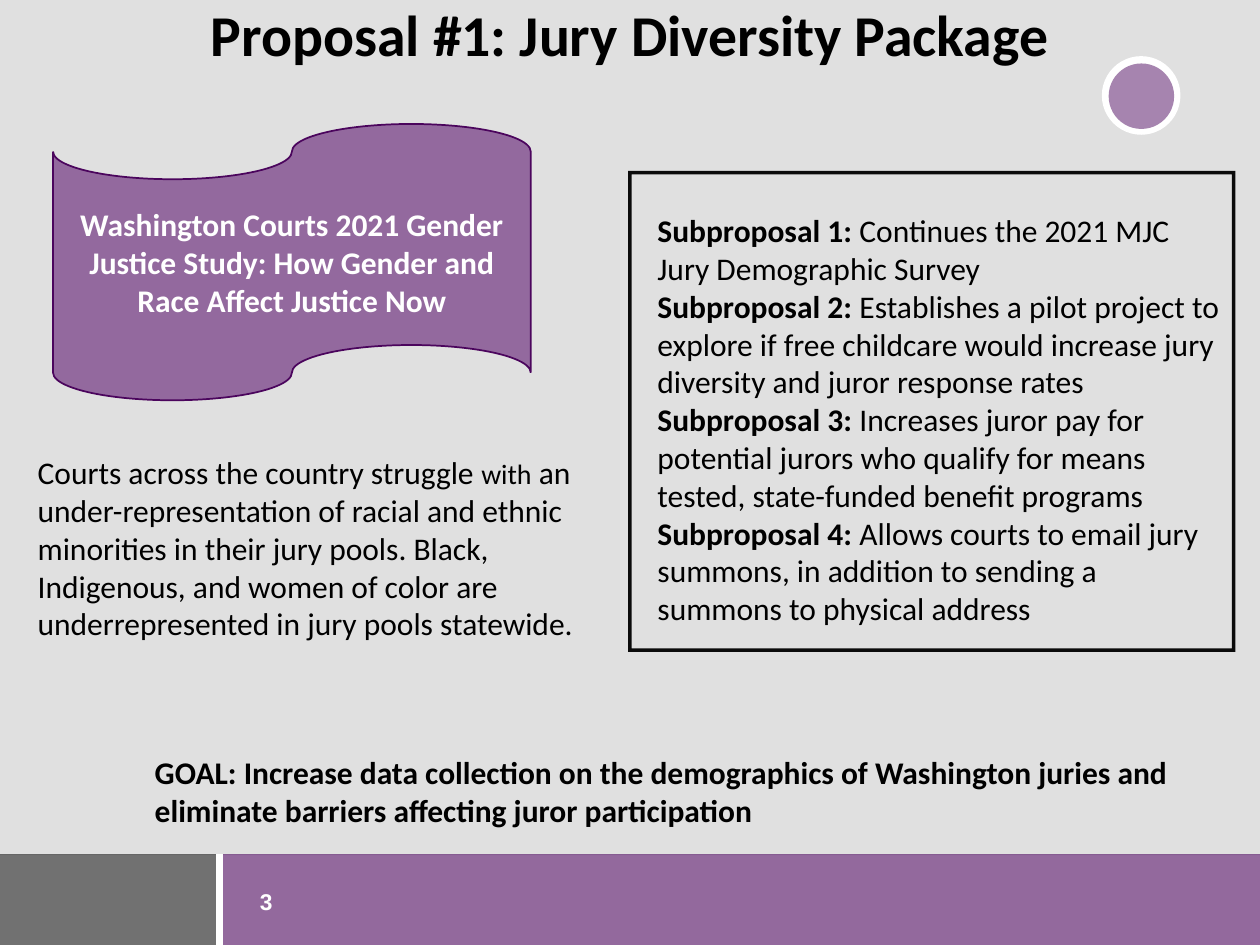
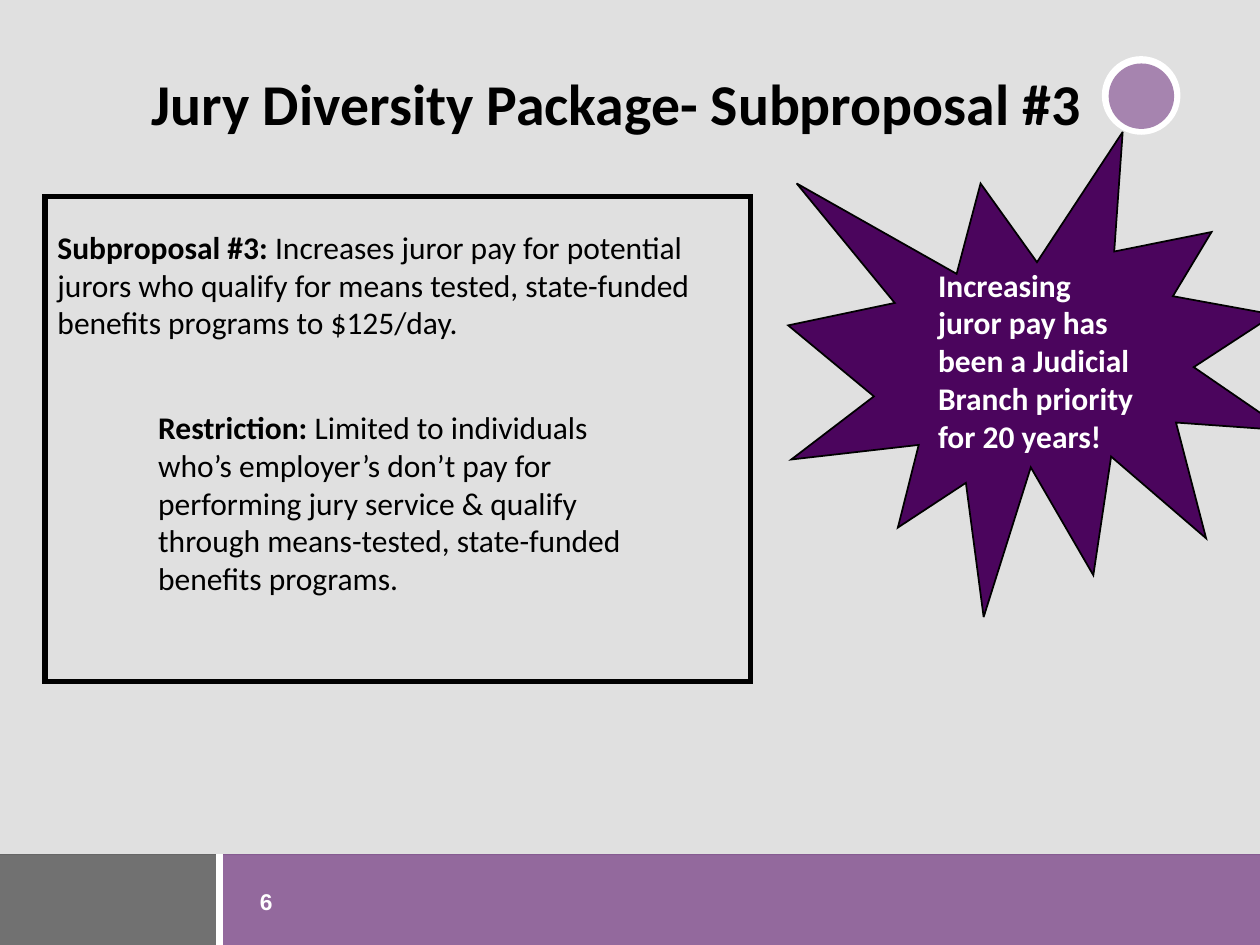
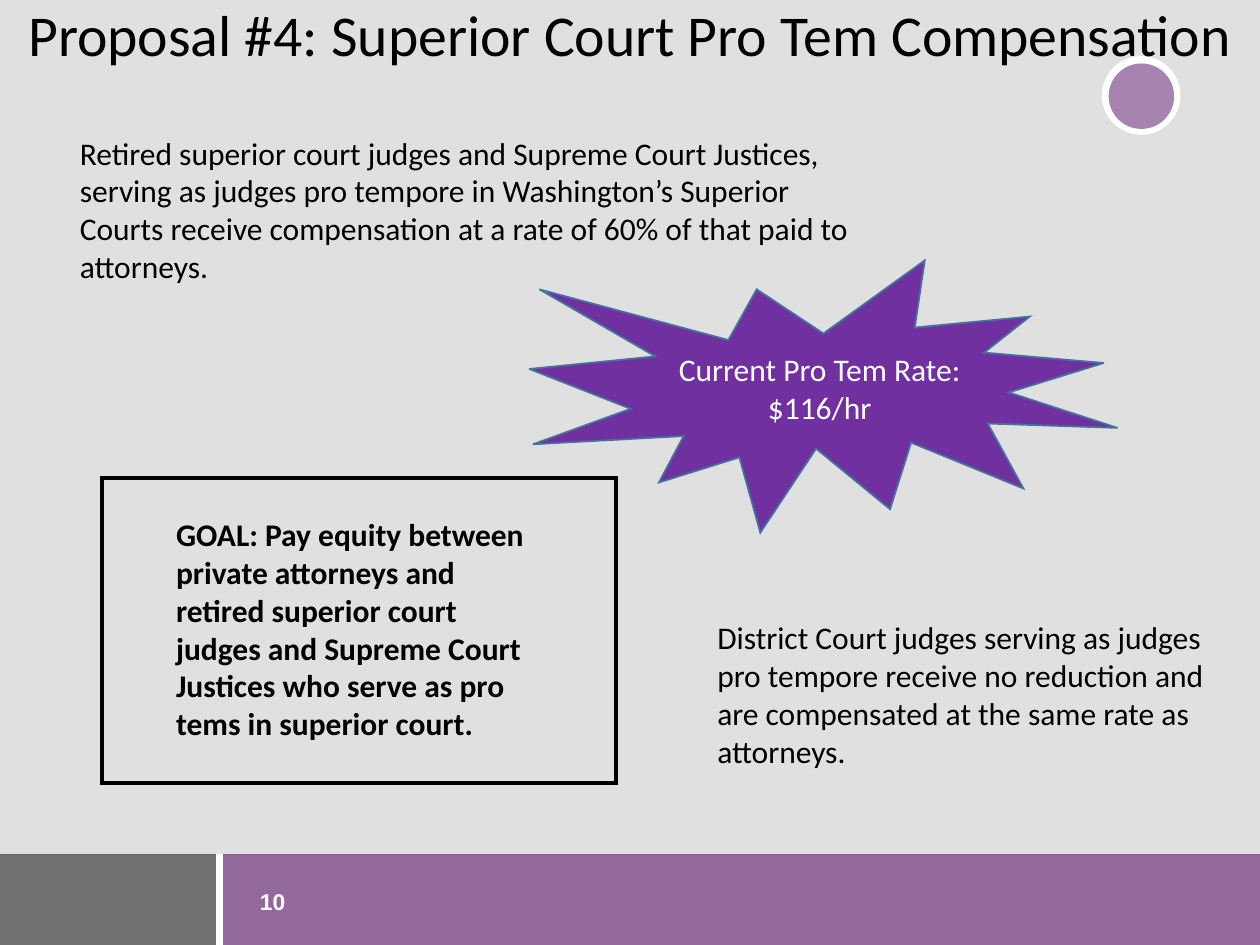
from dataclasses import dataclass

import lxml.etree
import pptx
import pptx.dml.color
import pptx.enum.shapes
import pptx.enum.text
import pptx.oxml
import pptx.oxml.ns
import pptx.util

Cm = pptx.util.Cm
Align = pptx.enum.text.PP_ALIGN
Anchor = pptx.enum.text.MSO_ANCHOR
Preset = pptx.enum.shapes.MSO_SHAPE


@dataclass(frozen=True)
class Theme:
    white: str = "FFFFFF"
    black: str = "000000"
    pale_grey: str = "D9D9D9"
    dark_grey: str = "262626"
    purple: str = "93699E"
    plum: str = "4B055D"
    violet: str = "7030A0"
    blue: str = "43739E"
    backdrop_opacity: int = 80
    circle_opacity: int = 49
    band_opacity: int = 60
    corner_opacity: int = 65
    frame_opacity: int = 95
    font: str = "Calibri"
    number_font: str = "Arial"
    title_size: int = 33
    body_size: int = 18
    small_size: int = 16
    number_size: int = 13


THEME = Theme()
SLIDE_WIDTH, SLIDE_HEIGHT = 25.4, 19.05
BAND_TOP, BAND_SPLIT, OVERLAP = 17.22, 4.42, 0.02


def bold(text):
    return text, {"bold": True}


def add_element(parent, tag, **attributes):
    return lxml.etree.SubElement(parent, pptx.oxml.ns.qn(tag), **attributes)


def paint(fill, color, opacity=100):
    fill.solid()
    fill.fore_color.rgb = pptx.dml.color.RGBColor.from_string(color)
    if opacity < 100:
        add_element(fill._xPr.find(".//" + pptx.oxml.ns.qn("a:srgbClr")), "a:alpha", val=str(opacity * 1000))


def write_text(frame, *paragraphs, size=THEME.body_size, font=THEME.font, color=THEME.black,
               weight=False, align=Align.LEFT, anchor=Anchor.TOP, spacing=1.0, wrap=True, plain_list=False):
    frame.word_wrap = wrap
    frame.auto_size = pptx.enum.text.MSO_AUTO_SIZE.NONE
    frame.vertical_anchor = anchor
    for index, runs in enumerate(paragraphs):
        paragraph = frame.add_paragraph() if index else frame.paragraphs[0]
        if plain_list:
            properties = paragraph._p.get_or_add_pPr()
            properties.set("marL", "0")
            properties.set("indent", "0")
            add_element(properties, "a:buNone")
        paragraph.alignment = align
        paragraph.line_spacing = spacing
        paragraph.space_before = pptx.util.Pt(0)
        for part in [runs] if isinstance(runs, str) else runs:
            text, changes = (part, {}) if isinstance(part, str) else part
            run = paragraph.add_run()
            run.text = text
            run.font.name = font
            run.font.size = pptx.util.Pt(changes.get("size", size))
            run.font.bold = changes.get("bold", weight)
            paint(run.font.fill, color)


class Deck:
    def __init__(self, theme):
        self.theme = theme
        self.presentation = pptx.Presentation()
        self.presentation.slide_width = Cm(SLIDE_WIDTH)
        self.presentation.slide_height = Cm(SLIDE_HEIGHT)
        self.slide = None

    def start_slide(self, number, title, title_box, layout="Title Only", weight=True):
        theme = self.theme
        self.slide = self.presentation.slides.add_slide(self.presentation.slide_layouts.get_by_name(layout))
        self.shape(Preset.RECTANGLE, (-OVERLAP, 0, SLIDE_WIDTH + OVERLAP, BAND_TOP + OVERLAP),
                   theme.pale_grey, opacity=theme.backdrop_opacity)
        self.shape(Preset.OVAL, (22.23, 1.15, 1.55, 1.55), theme.white, line=theme.white)
        self.shape(Preset.OVAL, (22.35, 1.28, 1.32, 1.32), theme.plum, opacity=theme.circle_opacity)
        band_height = SLIDE_HEIGHT - BAND_TOP + OVERLAP
        self.shape(Preset.RECTANGLE, (BAND_SPLIT, BAND_TOP, SLIDE_WIDTH - BAND_SPLIT, band_height),
                   theme.plum, opacity=theme.band_opacity)
        self.shape(Preset.RECTANGLE, (-OVERLAP, BAND_TOP, BAND_SPLIT + OVERLAP, band_height),
                   theme.dark_grey, opacity=theme.corner_opacity)
        number_box = self.text((5.24, 17.96, 0.84, 0.66), str(number), size=theme.number_size,
                               font=theme.number_font, color=theme.white, weight=True, spacing=0.9, wrap=False)
        frame = number_box.text_frame
        frame.margin_left = frame.margin_right = frame.margin_top = frame.margin_bottom = 0
        self.line((BAND_SPLIT, BAND_TOP), (BAND_SPLIT, BAND_TOP + band_height), theme.white, 4)
        self.placeholder(self.slide.shapes.title, title_box, title, size=theme.title_size,
                         weight=weight, align=Align.CENTER, spacing=0.9)

    def placeholder(self, shape, box, *paragraphs, **format):
        shape.left, shape.top, shape.width, shape.height = map(Cm, box)
        write_text(shape.text_frame, *paragraphs, **format)
        shape.element.getparent().append(shape.element)

    def body(self, box, *paragraphs):
        self.placeholder(self.slide.placeholders[1], box, *paragraphs, plain_list=True)

    def text(self, box, *paragraphs, **format):
        shape = self.slide.shapes.add_textbox(*map(Cm, box))
        write_text(shape.text_frame, *paragraphs, **format)
        return shape

    def shape(self, preset, box, fill=None, opacity=100, line=None, width=1, line_opacity=100):
        shape = self.slide.shapes.add_shape(preset, *map(Cm, box))
        shape.shadow.inherit = False
        if fill:
            paint(shape.fill, fill, opacity)
        else:
            shape.fill.background()
        if line:
            paint(shape.line.fill, line, line_opacity)
            shape.line.width = pptx.util.Pt(width)
            add_element(shape.line._get_or_add_ln(), "a:miter", lim="800000")
        else:
            shape.line.fill.background()
        return shape

    def callout(self, preset, box, text, fill, line, weight=False):
        shape = self.shape(preset, box, fill, line=line)
        write_text(shape.text_frame, text, color=self.theme.white, weight=weight,
                   align=Align.CENTER, anchor=Anchor.MIDDLE)

    def frame(self, box, width, opacity=100):
        self.shape(Preset.RECTANGLE, box, line=self.theme.black, width=width, line_opacity=opacity)

    def line(self, start, end, color, width):
        connector = self.slide.shapes.add_connector(
            pptx.enum.shapes.MSO_CONNECTOR.STRAIGHT, *map(Cm, start + end))
        paint(connector.line.fill, color)
        connector.line.width = pptx.util.Pt(width)
        add_element(connector.element.spPr, "a:effectLst")


def add_diversity_package(deck):
    theme = deck.theme
    deck.start_slide(3, "Proposal #1: Jury Diversity Package", (0, 0, SLIDE_WIDTH, 1.5),
                     layout="Title and Content")
    deck.text((0.51, 9.01, 12.5, 4.11), [
        "Courts across the country struggle ", ("with", {"size": theme.small_size}),
        " an under-representation of racial and ethnic minorities in their jury pools. Black, Indigenous, "
        "and women of color are underrepresented in jury pools statewide."])
    deck.callout(Preset.FLOWCHART_PUNCHED_TAPE, (1.07, 2.5, 9.63, 5.57),
                 "Washington Courts 2021 Gender Justice Study: How Gender and Race Affect Justice Now",
                 theme.purple, theme.plum, weight=True)
    deck.text((2.87, 15.05, 22.02, 1.8),
              "GOAL: Increase data collection on the demographics of Washington juries and "
              "eliminate barriers affecting juror participation", weight=True)
    subproposals = [
        "Continues the 2021 MJC Jury Demographic Survey",
        "Establishes a pilot project to explore if free childcare would increase jury diversity "
        "and juror response rates",
        "Increases juror pay for potential jurors who qualify for means tested, state-funded benefit programs",
        "Allows courts to email jury summons, in addition to sending a summons to physical address",
    ]
    deck.body((13, 4.13, 11.91, 8.71),
              *([bold(f"Subproposal {index}: "), text] for index, text in enumerate(subproposals, 1)))
    deck.frame((12.7, 3.48, 12.17, 9.63), 2, theme.frame_opacity)


def add_juror_pay(deck):
    theme = deck.theme
    deck.start_slide(6, "Jury Diversity Package- Subproposal #3", (-0.27, 1.4, SLIDE_WIDTH, 1.5))
    deck.shape(Preset.EXPLOSION1, (15.89, 2.66, 10.03, 9.78), theme.plum, line=theme.black)
    deck.text((18.66, 5.23, 4.5, 4.11),
              "Increasing juror pay has been a Judicial Branch priority for 20 years!",
              color=theme.white, weight=True)
    deck.text((0.91, 4.47, 13.97, 2.57), [
        bold("Subproposal #3: "),
        "Increases juror pay for potential jurors who qualify for means tested, "
        "state-funded benefits programs to $125/day."])
    deck.text((2.94, 8.1, 9.91, 4.11), [
        bold("Restriction: "),
        "Limited to individuals who’s employer’s don’t pay for performing jury service & qualify "
        "through means-tested, state-funded benefits programs."])
    deck.frame((0.91, 3.96, 14.22, 9.78), 3)


def add_pro_tem_compensation(deck):
    theme = deck.theme
    deck.start_slide(10, "Proposal #4: Superior Court Pro Tem Compensation", (0, 0, SLIDE_WIDTH, 3.3),
                     weight=False)
    deck.text((3.3, 10.26, 7.87, 4.88),
              "GOAL: Pay equity between private attorneys and retired superior court judges and "
              "Supreme Court Justices who serve as pro tems in superior court.", weight=True)
    deck.frame((2.06, 9.63, 10.36, 6.15), 2.25)
    deck.text((1.36, 2.57, 16.51, 4.11),
              "Retired superior court judges and Supreme Court Justices, serving as judges pro tempore in "
              "Washington’s Superior Courts receive compensation at a rate of 60% of that paid to attorneys.")
    deck.callout(Preset.EXPLOSION1, (10.67, 5.25, 11.86, 5.49), "Current Pro Tem Rate: $116/hr",
                 theme.violet, theme.blue)
    deck.text((14.21, 12.34, 10.95, 4.14),
              "District Court judges serving as judges pro tempore receive no reduction and are "
              "compensated at the same rate as attorneys.")


def main():
    deck = Deck(THEME)
    add_diversity_package(deck)
    add_juror_pay(deck)
    add_pro_tem_compensation(deck)
    deck.presentation.save("out.pptx")


if __name__ == "__main__":
    main()
